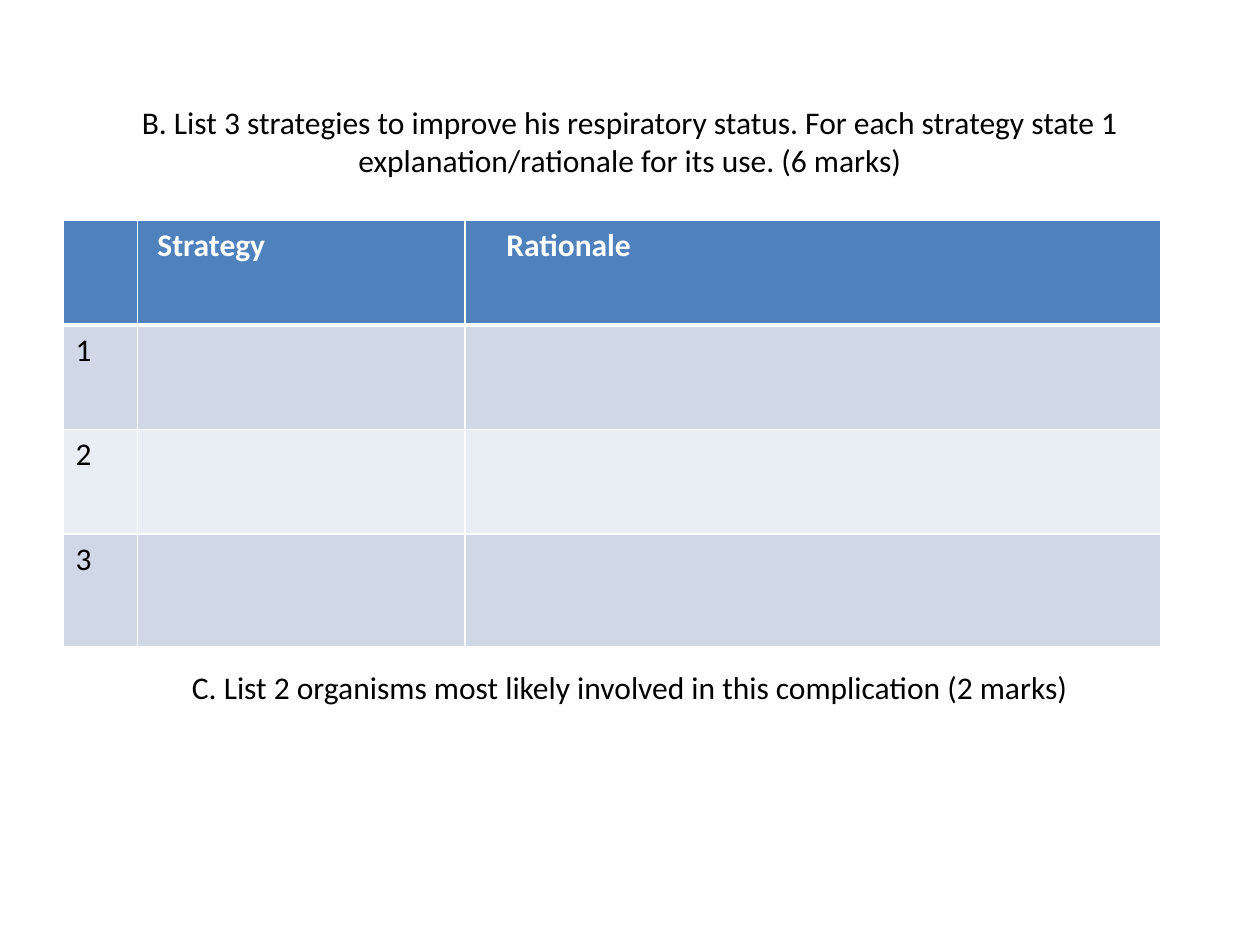
from dataclasses import dataclass

from lxml.etree import SubElement
from pptx import Presentation
from pptx.dml.color import RGBColor
from pptx.enum.text import MSO_ANCHOR, PP_ALIGN
from pptx.oxml.ns import qn
from pptx.slide import Slide
from pptx.util import Inches, Pt

BLACK = RGBColor(0x00, 0x00, 0x00)
WHITE = RGBColor(0xFF, 0xFF, 0xFF)
BLUE = RGBColor(0x4F, 0x81, 0xBD)
BANDS = (RGBColor(0xE9, 0xED, 0xF4), RGBColor(0xD0, 0xD8, 0xE8))

TASKS = (
    "B. List 3 strategies to improve his respiratory status. "
    "For each strategy state 1 explanation/rationale for its use. (6 marks)",
    "C. List 2 organisms most likely involved in this complication (2 marks)",
)
ROWS = (("", "Strategy", "Rationale"), ("1", "", ""), ("2", "", ""), ("3", "", ""))
WIDTHS = (0.59, 2.6, 5.52)
HEIGHTS = (0.83, 0.83, 0.83, 0.89)
INDENTS = (0.1, 0.16, 0.33)


@dataclass
class Sheet:
    """Draw the parts of an exam question slide in one style."""

    slide: Slide
    face: str = "Calibri"
    size: int = 18

    def style(self, para, color, bold=False):
        font = para.font
        font.name, font.size, font.bold = self.face, Pt(self.size), bold
        font.color.rgb = color

    def title(self, box, texts, gap):
        shape = self.slide.shapes.title
        shape.left, shape.top, shape.width, shape.height = map(Inches, box)
        frame = shape.text_frame
        frame.word_wrap = True
        frame.vertical_anchor = MSO_ANCHOR.MIDDLE
        frame.text = "\n".join(texts)
        for para in frame.paragraphs:
            para.alignment = PP_ALIGN.CENTER
            self.style(para, BLACK)
        for para in frame.paragraphs[1:]:
            para.space_before = Pt(gap)

    def border(self, cell, side, width):
        props = cell._tc.get_or_add_tcPr()
        line = SubElement(props, qn(f"a:ln{side}"), w=str(Pt(width)))
        fill = SubElement(line, qn("a:solidFill"))
        SubElement(fill, qn("a:srgbClr"), val=str(WHITE))

    def cell(self, cell, text, row, indent):
        head = row == 0
        for side in "LRTB":
            thick = (head and side == "B") or (row == 1 and side == "T")
            self.border(cell, side, 3 if thick else 1)
        cell.fill.solid()
        cell.fill.fore_color.rgb = BLUE if head else BANDS[row % 2]
        cell.margin_left = Inches(indent)
        cell.text = text
        self.style(cell.text_frame.paragraphs[0], WHITE if head else BLACK, head)

    def table(self, left, top, rows, widths, heights, indents):
        box = map(Inches, (left, top, sum(widths), sum(heights)))
        table = self.slide.shapes.add_table(len(rows), len(widths), *box).table
        for col, width in zip(table.columns, widths):
            col.width = Inches(width)
        for index, (row, height) in enumerate(zip(table.rows, heights)):
            row.height = Inches(height)
            for cell, text, indent in zip(row.cells, rows[index], indents):
                self.cell(cell, text, index, indent)


def main():
    deck = Presentation()
    deck.slide_width, deck.slide_height = Inches(10), Inches(7.5)
    sheet = Sheet(deck.slides.add_slide(deck.slide_layouts[5]))
    sheet.title((0.5, 0.3, 9, 5.82), TASKS, 280)
    sheet.table(0.5, 1.75, ROWS, WIDTHS, HEIGHTS, INDENTS)
    deck.save("out.pptx")


if __name__ == "__main__":
    main()
